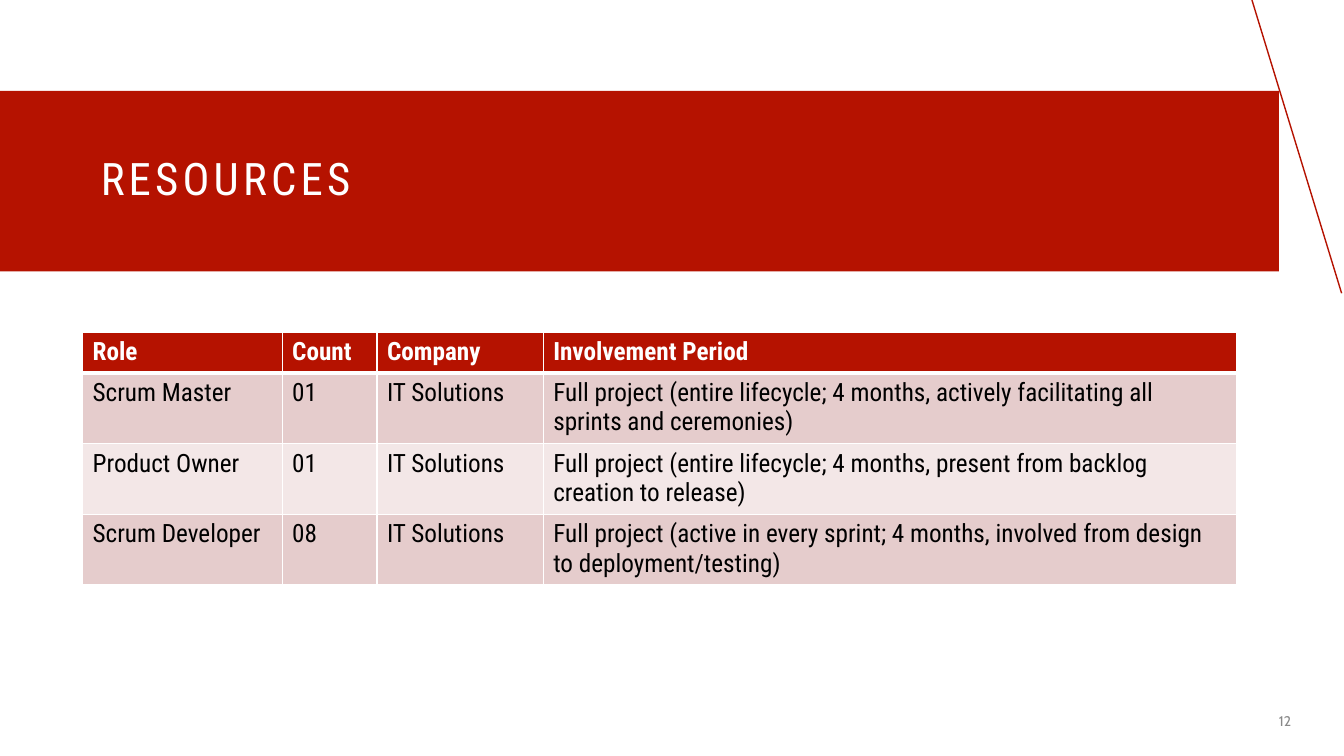
from pptx import Presentation
from pptx import util as u
from pptx.dml.color import RGBColor
from pptx.enum import shapes, text
from pptx.oxml import parse_xml
from pptx.oxml.ns import nsdecls

COLORS = {"red": "B51200", "white": "FFFFFF", "black": "000000",
          "grey": "898989", "dark_band": "E5CCCC", "light_band": "F3E7E7"}
BODY_FONT, NUMBER_FONT = "Roboto Condensed", "Cabin"

HEADINGS = ("Role", "Count", "Company", "Involvement Period")
RESOURCES = (
    ("Scrum Master", "01", "IT Solutions",
     "Full project (entire lifecycle; 4 months, actively facilitating all sprints and ceremonies)"),
    ("Product Owner", "01", "IT Solutions",
     "Full project (entire lifecycle; 4 months, present from backlog creation to release)"),
    ("Scrum Developer", "08", "IT Solutions",
     "Full project (active in every sprint; 4 months, involved from design to deployment/testing)"),
)
COLUMN_WIDTHS = (5.03, 2.39, 4.19, 17.48)
HEADER_HEIGHT, ROW_HEIGHT = 1.02, 1.74


def rgb(color):
    return RGBColor.from_string(COLORS[color])


def style(paragraph, size, color, name=BODY_FONT, bold=False):
    font = paragraph.font
    font.size, font.name, font.bold = u.Pt(size), name, bold
    font.color.rgb = rgb(color)


def add_slanted_line(slide, left, top, width, height):
    slant = slide.shapes.add_connector(
        shapes.MSO_CONNECTOR.STRAIGHT, u.Cm(left), u.Cm(top),
        u.Cm(left + width), u.Cm(top + height))
    slant.line.color.rgb = rgb("red")
    slant.line.width = u.Pt(1)
    slant._element.spPr.append(parse_xml(f"<a:effectLst {nsdecls('a')}/>"))


def add_title_band(slide, title, left, top, width, height):
    band = slide.shapes.add_shape(shapes.MSO_SHAPE.RECTANGLE,
                                  *map(u.Cm, (left, top, width, height)))
    band.shadow.inherit = False
    band.fill.solid()
    band.fill.fore_color.rgb = rgb("red")
    band.line.fill.background()
    frame = band.text_frame
    frame.word_wrap = True
    frame.margin_left = u.Cm(2.54)
    frame.vertical_anchor = text.MSO_ANCHOR.MIDDLE
    heading = frame.paragraphs[0]
    heading.alignment = text.PP_ALIGN.LEFT
    heading.line_spacing = 0.9
    style(heading, 32, "white")
    letters = heading.add_run()
    letters.text = title
    letters.font._element.set("spc", "300")


def add_page_number(slide, number, left, top, width, height):
    box = slide.shapes.add_textbox(*map(u.Cm, (left, top, width, height)))
    frame = box.text_frame
    frame.word_wrap = True
    frame.vertical_anchor = text.MSO_ANCHOR.MIDDLE
    page = frame.paragraphs[0]
    page.text = number
    page.alignment = text.PP_ALIGN.RIGHT
    style(page, 10, "grey", NUMBER_FONT)


def add_cell_borders(cell, bottom_width):
    properties = cell._tc.get_or_add_tcPr()
    widths = {"lnL": 1, "lnR": 1, "lnT": 1, "lnB": bottom_width}
    for position, (side, width) in enumerate(widths.items()):
        properties.insert(position, parse_xml(
            f'<a:{side} {nsdecls("a")} w="{u.Pt(width)}"><a:solidFill>'
            f'<a:srgbClr val="{COLORS["white"]}"/></a:solidFill></a:{side}>'))


def add_resource_table(slide, left, top):
    records = (HEADINGS, *RESOURCES)
    height = HEADER_HEIGHT + ROW_HEIGHT * len(RESOURCES)
    resources = slide.shapes.add_table(
        len(records), len(HEADINGS),
        *map(u.Cm, (left, top, sum(COLUMN_WIDTHS), height))).table
    for column, width in zip(resources.columns, COLUMN_WIDTHS):
        column.width = u.Cm(width)
    for index, (row, record) in enumerate(zip(resources.rows, records)):
        header = index == 0
        row.height = u.Cm(HEADER_HEIGHT if header else ROW_HEIGHT)
        band = "red" if header else "dark_band" if index % 2 else "light_band"
        for cell, entry in zip(row.cells, record):
            cell.text = entry
            cell.fill.solid()
            cell.fill.fore_color.rgb = rgb(band)
            style(cell.text_frame.paragraphs[0], 18,
                  "white" if header else "black", bold=header)
            add_cell_borders(cell, 3 if header else 1)


def build_resources_slide(deck):
    slide = deck.slides.add_slide(deck.slide_layouts[6])
    add_slanted_line(slide, 31.55, 0, 2.26, 7.39)
    add_title_band(slide, "RESOURCES", 0, 2.29, 32.23, 4.55)
    add_page_number(slide, "12", 28.52, 17.65, 4.27, 1.02)
    add_resource_table(slide, 2.08, 8.38)


def main():
    deck = Presentation()
    deck.slide_width, deck.slide_height = u.Cm(33.87), u.Cm(19.05)
    build_resources_slide(deck)
    deck.save("out.pptx")


if __name__ == "__main__":
    main()
